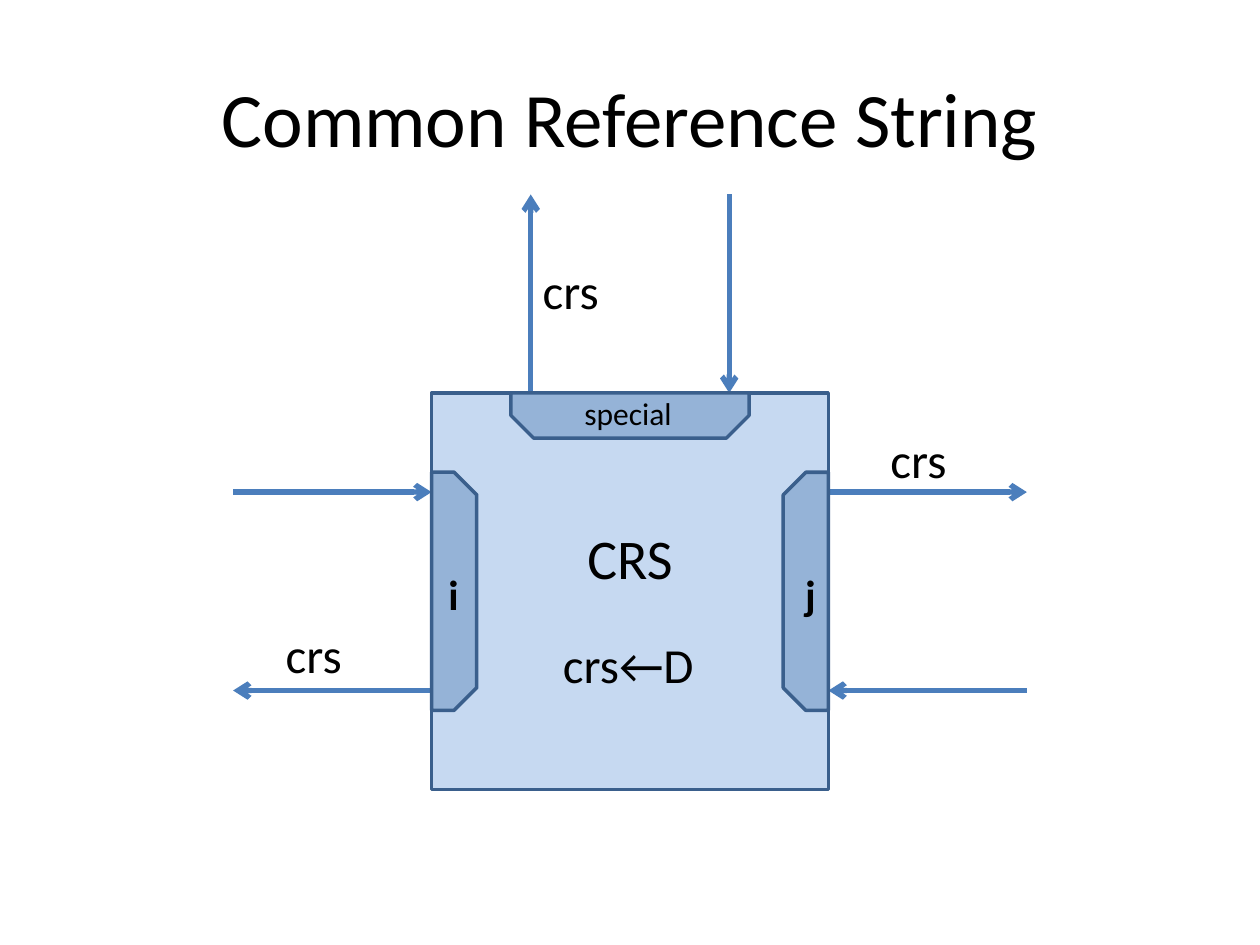
from dataclasses import dataclass

from lxml.etree import SubElement
from pptx import Presentation
from pptx.dml.color import RGBColor
from pptx.enum.shapes import MSO_CONNECTOR as Connector, MSO_SHAPE as Preset
from pptx.enum.text import MSO_ANCHOR as Anchor, PP_ALIGN as Align
from pptx.oxml.ns import qn
from pptx.util import Cm, Pt

BOX_LEFT, BOX_TOP, BOX_SIDE = 8.7, 7.92, 8
BOX_RIGHT = BOX_LEFT + BOX_SIDE
CENTRE_X, CENTRE_Y = BOX_LEFT + BOX_SIDE / 2, BOX_TOP + BOX_SIDE / 2
NEAR, FAR, REACH = 2, 6, 4
TAB_LENGTH, TAB_DEPTH = 4.8, 0.91


@dataclass
class Arrow:
    x1: float
    y1: float
    x2: float
    y2: float


@dataclass
class Label:
    text: str
    left: float
    top: float
    width: float
    height: float
    size: int = 28
    bold: bool = False
    wrap: bool = True


@dataclass
class Port:
    centre_x: float
    centre_y: float
    rotation: int
    label: Label


def colour(code: str) -> RGBColor:
    return RGBColor.from_string(code)


def write(frame, text: str, *, size: int, bold: bool = False, align=Align.LEFT,
          anchor=Anchor.TOP, wrap: bool = True) -> None:
    frame.word_wrap = wrap
    frame.vertical_anchor = anchor
    paragraph = frame.paragraphs[0]
    paragraph.alignment = align
    run = paragraph.add_run()
    run.text = text
    run.font.name = "Calibri"
    run.font.size = Pt(size)
    run.font.bold = bold
    run.font.color.rgb = colour("000000")


def draw_shape(slide, preset, left: float, top: float, width: float, height: float, fill: str):
    shape = slide.shapes.add_shape(preset, Cm(left), Cm(top), Cm(width), Cm(height))
    shape.shadow.inherit = False
    shape.fill.solid()
    shape.fill.fore_color.rgb = colour(fill)
    shape.line.color.rgb = colour("3A5F8C")
    shape.line.width = Pt(2)
    return shape


def draw_arrow(slide, arrow: Arrow) -> None:
    connector = slide.shapes.add_connector(
        Connector.STRAIGHT, Cm(arrow.x1), Cm(arrow.y1), Cm(arrow.x2), Cm(arrow.y2))
    connector.line.color.rgb = colour("4B7EBC")
    connector.line.width = Pt(3)
    SubElement(connector.line._get_or_add_ln(), qn("a:tailEnd"), type="arrow")
    SubElement(connector._element.spPr, qn("a:effectLst"))


def draw_label(slide, label: Label, align=Align.LEFT, anchor=Anchor.TOP) -> None:
    box = slide.shapes.add_textbox(
        Cm(label.left), Cm(label.top), Cm(label.width), Cm(label.height))
    write(box.text_frame, label.text, size=label.size, bold=label.bold,
          align=align, anchor=anchor, wrap=label.wrap)


def draw_port(slide, port: Port) -> None:
    tab = draw_shape(slide, Preset.SNIP_2_SAME_RECTANGLE,
                     port.centre_x - TAB_LENGTH / 2, port.centre_y - TAB_DEPTH / 2,
                     TAB_LENGTH, TAB_DEPTH, "95B3D7")
    tab.adjustments[0] = 0.5
    tab.rotation = port.rotation
    draw_label(slide, port.label)


def main() -> None:
    deck = Presentation()
    deck.slide_width, deck.slide_height = Cm(25.4), Cm(19.05)
    slide = deck.slides.add_slide(deck.slide_layouts[6])

    functionality = draw_shape(slide, Preset.RECTANGLE, BOX_LEFT, BOX_TOP,
                               BOX_SIDE, BOX_SIDE, "C6D9F1")
    functionality.text_frame.margin_bottom = Cm(1.5)
    write(functionality.text_frame, "CRS", size=32, align=Align.CENTER, anchor=Anchor.MIDDLE)

    title = Label("Common Reference String", 1.27, 0.76, 22.86, 3.18, 44)
    draw_label(slide, title, Align.CENTER, Anchor.MIDDLE)

    upper, lower = BOX_TOP + NEAR, BOX_TOP + FAR
    outgoing, incoming = BOX_LEFT + NEAR, BOX_LEFT + FAR
    arrows = [
        Arrow(BOX_LEFT - REACH, upper, BOX_LEFT, upper),
        Arrow(BOX_LEFT, lower, BOX_LEFT - REACH, lower),
        Arrow(BOX_RIGHT, upper, BOX_RIGHT + REACH, upper),
        Arrow(BOX_RIGHT + REACH, lower, BOX_RIGHT, lower),
        Arrow(outgoing, BOX_TOP, outgoing, BOX_TOP - REACH),
        Arrow(incoming, BOX_TOP - REACH, incoming, BOX_TOP),
    ]
    for arrow in arrows:
        draw_arrow(slide, arrow)

    inset = TAB_DEPTH / 2
    ports = [
        Port(CENTRE_X, BOX_TOP + inset, 180,
             Label("special", 11.53, 7.82, 2.34, 1.02, 18, wrap=False)),
        Port(BOX_RIGHT - inset, CENTRE_Y, 270,
             Label("j", 15.98, 11.33, 0.74, 1.27, 24, bold=True, wrap=False)),
        Port(BOX_LEFT + inset, CENTRE_Y, 90,
             Label("i", 8.79, 11.33, 0.71, 1.27, 24, bold=True, wrap=False)),
    ]
    for port in ports:
        draw_port(slide, port)

    messages = [("crs←D", 11.1, 12.67), ("crs", 5.51, 12.47),
                ("crs", 10.69, 5.13), ("crs", 17.7, 8.53)]
    for text, left, top in messages:
        draw_label(slide, Label(text, left, top, 3.4, 1.45))

    deck.save("out.pptx")


if __name__ == "__main__":
    main()
